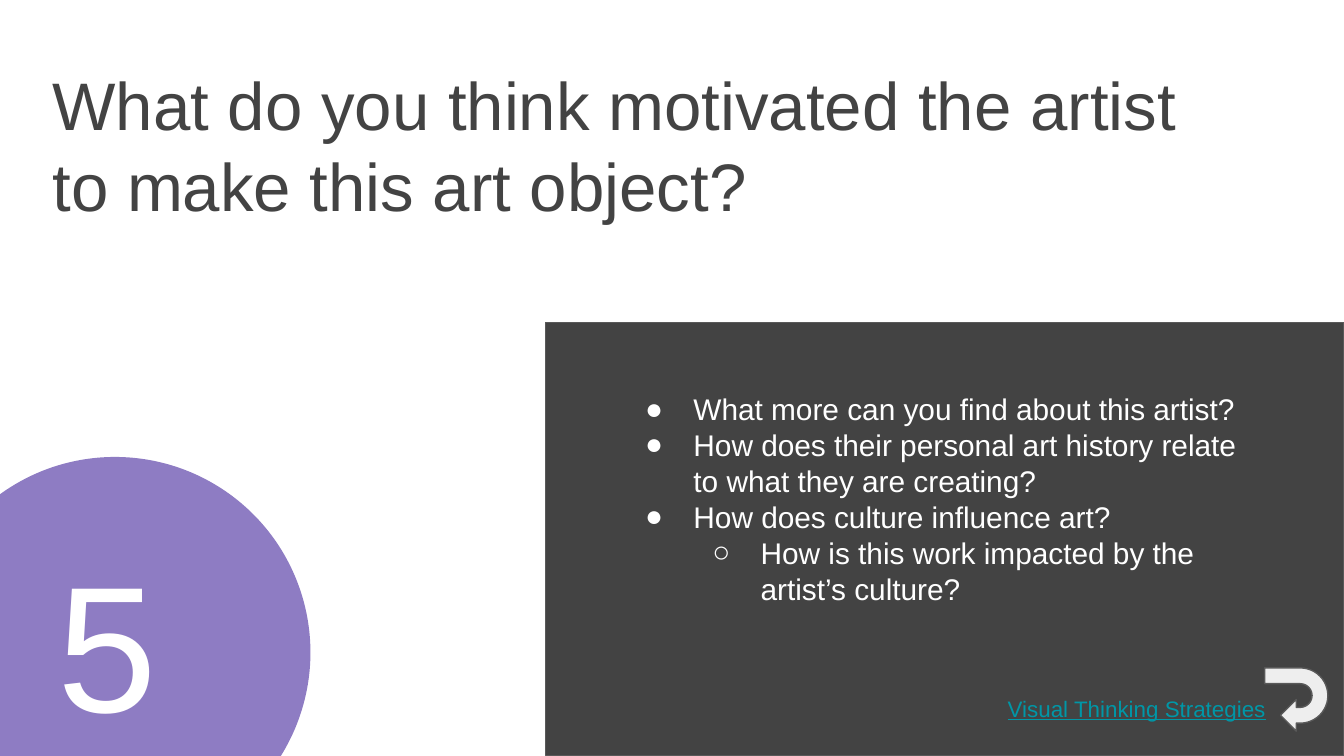
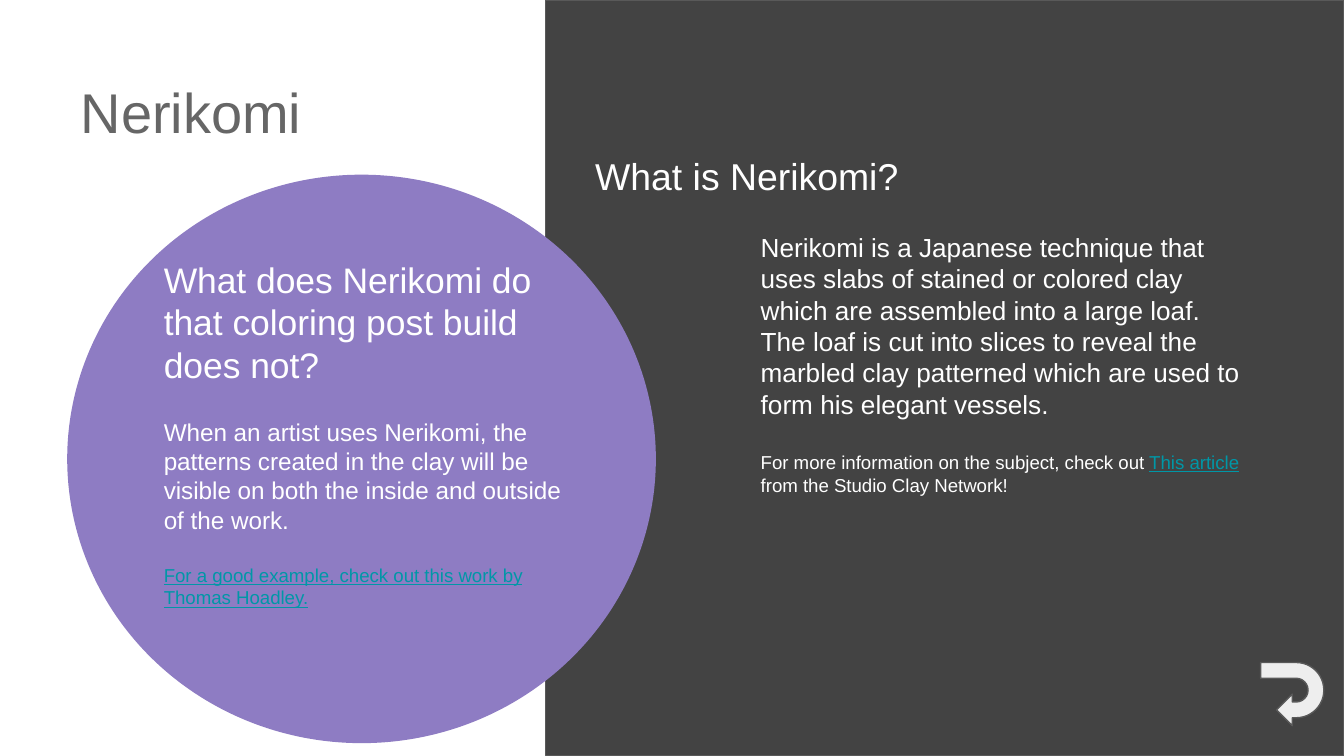
from pptx import Presentation
from pptx import util as u
from pptx.dml import color
from pptx.enum import shapes, text
from pptx.oxml import ns
from lxml import etree

WHITE, DARK, EDGE = "FFFFFF", "434343", "595959"
PLUM, TEAL, GREY, PALE = "8E7CC3", "0097A7", "666666", "EEEEEE"
KIND = shapes.MSO_SHAPE

deck = Presentation()
deck.slide_width = u.Inches(10)
deck.slide_height = deck.slide_width * 9 // 16


def draw(page, kind, at, fill, edge=None):
    form = page.shapes.add_shape(kind, *[u.Inches(n) for n in at])
    form.shadow.inherit = False
    form.fill.solid()
    form.fill.fore_color.rgb = color.RGBColor.from_string(fill)
    if edge:
        form.line.color.rgb = color.RGBColor.from_string(edge)
        form.line.width = u.Pt(0.75)
    else:
        form.line.fill.background()
    return form


def write(page, at, paras, holder=None, size=14, ink=WHITE):
    box = holder or page.shapes.add_textbox(0, 0, 0, 0)
    box.left, box.top, box.width, box.height = [u.Inches(n) for n in at]
    page.shapes._spTree.append(box._element)
    frame = box.text_frame
    frame.word_wrap = True
    frame.auto_size = text.MSO_AUTO_SIZE.NONE
    frame.vertical_anchor = text.MSO_ANCHOR.TOP
    frame.margin_left = frame.margin_right = u.Inches(0.1)
    frame.margin_top = frame.margin_bottom = u.Inches(0.1)
    for i, item in enumerate(paras):
        para = frame.paragraphs[0] if i == 0 else frame.add_paragraph()
        level = item.get("level")
        props = para._p.get_or_add_pPr()
        para.alignment = text.PP_ALIGN.LEFT
        para.line_spacing = 1.0
        para.space_before = u.Pt(item.get("gap", 0))
        para.space_after = u.Pt(0)
        if level is None:
            props.set("marL", "0")
            props.set("indent", "0")
            etree.SubElement(props, ns.qn("a:buNone"))
        else:
            para.level = level
            props.set("marL", str(u.Inches(0.5 * (level + 1))))
            props.set("indent", str(u.Inches(-0.36)))
            tint = etree.SubElement(props, ns.qn("a:buClr"))
            etree.SubElement(tint, ns.qn("a:srgbClr")).set("val", WHITE)
            etree.SubElement(props, ns.qn("a:buChar")).set("char", "●○"[level])
        for words, tone in item["runs"]:
            run = para.add_run()
            run.text = words
            run.font.name = "Arial"
            run.font.size = u.Pt(item.get("size", size))
            run.font.color.rgb = color.RGBColor.from_string(tone or ink)
            run.font.underline = tone == TEAL


ask, clay = [deck.slides.add_slide(deck.slide_layouts[1]) for _ in range(2)]

draw(ask, KIND.OVAL, (-0.6, 3.4, 2.91, 2.91), PLUM)
draw(ask, KIND.RECTANGLE, (4.06, 2.4, 5.94, 3.22), DARK, EDGE)
points = [
    ("What more can you find about this artist?", 0),
    ("How does their personal art history relate to what they are creating?", 0),
    ("How does culture influence art?", 0),
    ("How is this work impacted by the artist’s culture?", 1),
]
write(ask, (4.56, 2.81, 4.93, 1.87),
      [{"runs": [(words, None)], "level": level} for words, level in points],
      holder=ask.placeholders[1], size=16)
write(ask, (0.29, 0.37, 8.84, 0.87),
      [{"runs": [("What do you think motivated the artist to make this art object?", None)]}],
      holder=ask.shapes.title, size=36, ink=DARK)
write(ask, (0.33, 3.87, 2.14, 2.32), [{"runs": [("5", None)]}], size=96)

draw(clay, KIND.RECTANGLE, (4.06, 0, 5.94, 5.62), DARK, EDGE)
draw(clay, KIND.OVAL, (0.5, 1.3, 4.38, 4.23), PLUM)
write(clay, (4.33, 1.04, 5.35, 0.44), [{"runs": [("What is Nerikomi?", None)]}], size=20)
write(clay, (5.56, 1.62, 3.84, 3.58), [
    {"runs": [("Nerikomi is a Japanese technique that uses slabs of stained or colored clay "
               "which are assembled into a large loaf. The loaf is cut into slices to reveal "
               "the marbled clay patterned which are used to form his elegant vessels.", None)]},
    {"runs": [("For more information on the subject, check out ", None),
              ("This article", TEAL),
              (" from the Studio Clay Network!", None)], "size": 10, "gap": 17},
], holder=clay.placeholders[1])
write(clay, (1.12, 1.82, 3.28, 3.07), [
    {"runs": [("What does Nerikomi do that coloring post build does not?", None)], "size": 19},
    {"runs": [("When an artist uses Nerikomi, the patterns created in the clay will be "
               "visible on both the inside and outside of the work.", None)],
     "size": 13, "gap": 17},
    {"runs": [("For a good example, check out this work by Thomas Hoadley.", TEAL)],
     "size": 10, "gap": 16},
])
write(clay, (0.5, 0.48, 3.28, 1), [{"runs": [("Nerikomi", None)]}],
      holder=clay.shapes.title, size=30, ink=GREY)

for page, left, top in ((ask, 9.41, 4.97), (clay, 9.38, 4.93)):
    back = draw(page, KIND.U_TURN_ARROW, (left, top, 0.47, 0.47), PALE, EDGE)
    back.rotation = 90
    for i, bend in enumerate((0.25, 0.25, 0.25, 0.438, 0.75)):
        back.adjustments[i] = round(bend, 2)

write(ask, (7.4, 5.07, 2.4, 0.38),
      [{"runs": [("Visual Thinking Strategies", TEAL)]}], size=12)

deck.save("out.pptx")
